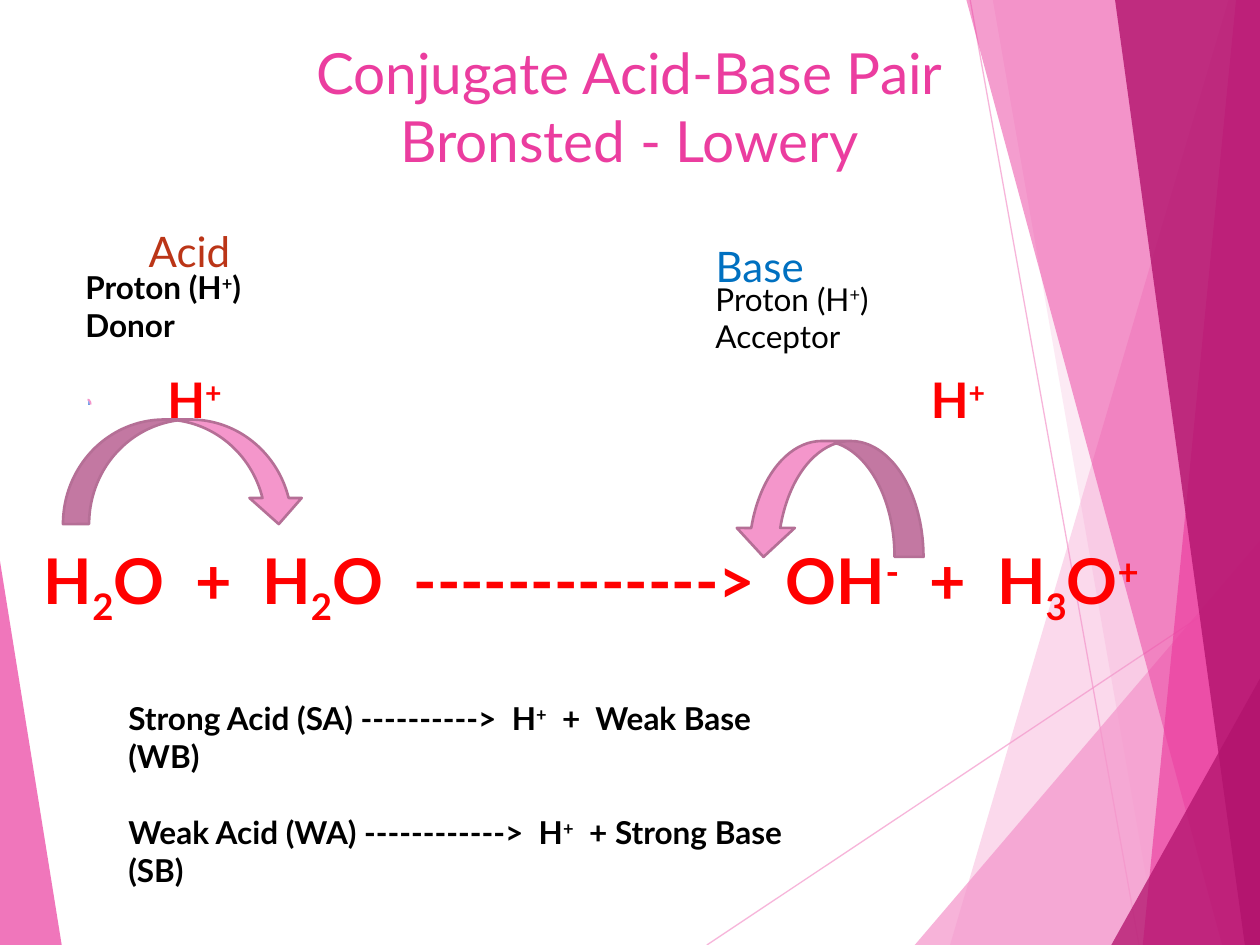
from dataclasses import dataclass
from typing import Optional

from lxml.etree import SubElement
from pptx import Presentation
from pptx.dml.color import RGBColor
from pptx.enum.shapes import MSO_CONNECTOR, MSO_SHAPE
from pptx.enum.text import MSO_ANCHOR as Anchor, MSO_AUTO_SIZE as AutoSize, PP_ALIGN as Align
from pptx.oxml.ns import qn
from pptx.util import Inches, Pt

COLORS = {
    "light": "F496CB", "pink": "EB3D9F", "deep": "B2136D", "edge": "B56F96",
    "acid": "BB3517", "base": "0070C0", "red": "FF0000", "black": "000000",
}
FONT = "Lato"
SHIFT = {"^": "30000", "_": "-25000"}


@dataclass
class Facet:
    points: list
    color: str
    opacity: int


@dataclass
class Ray:
    start: tuple
    end: tuple


@dataclass
class Caption:
    box: tuple
    lines: list
    bold: bool = True
    color: str = "black"
    gap: float = 0


@dataclass
class Transfer:
    box: tuple
    leftward: bool


def rgb(name: str) -> RGBColor:
    return RGBColor.from_string(COLORS[name])


def set_opacity(fill, percent: int) -> None:
    color = fill._xPr.find(qn("a:solidFill"))[0]
    SubElement(color, qn("a:alpha")).set("val", str(percent * 1000))


def draw_ray(shapes, ray: Ray) -> None:
    ends = [Inches(v) for v in ray.start + ray.end]
    line = shapes.add_connector(MSO_CONNECTOR.STRAIGHT, *ends)
    line.line.color.rgb = rgb("light")
    line.line.width = Pt(0.75)
    set_opacity(line.line.fill, 70)
    SubElement(line.element.spPr, qn("a:effectLst"))


def draw_facet(shapes, facet: Facet) -> None:
    points = [(Inches(x), Inches(y)) for x, y in facet.points]
    builder = shapes.build_freeform(*points[0], scale=1.0)
    builder.add_line_segments(points[1:], close=True)
    shape = builder.convert_to_shape()
    shape.shadow.inherit = False
    shape.fill.solid()
    shape.fill.fore_color.rgb = rgb(facet.color)
    set_opacity(shape.fill, facet.opacity)
    shape.line.fill.background()


def add_run(paragraph, text: str, color: str, size: float, bold: bool = False,
            shift: Optional[str] = None) -> None:
    run = paragraph.add_run()
    run.text = text
    for key, value in {"name": FONT, "size": Pt(size), "bold": bold}.items():
        setattr(run.font, key, value)
    run.font.color.rgb = rgb(color)
    if shift:
        run.font._element.set("baseline", SHIFT[shift])


def add_formula(paragraph, text: str, color: str, size: float, bold: bool) -> None:
    """The character after ^ is raised, and the one after _ is lowered."""
    plain, marks = "", iter(text)
    for mark in marks:
        if mark not in SHIFT:
            plain += mark
            continue
        add_run(paragraph, plain, color, size, bold)
        add_run(paragraph, next(marks), color, size, bold, mark)
        plain = ""
    if plain:
        add_run(paragraph, plain, color, size, bold)


def draw_caption(shapes, caption: Caption):
    frame = shapes.add_textbox(*map(Inches, caption.box)).text_frame
    frame.word_wrap = True
    for index, (text, size) in enumerate(caption.lines):
        paragraph = frame.add_paragraph() if index else frame.paragraphs[0]
        if index:
            paragraph.space_before = Pt(caption.gap)
        add_formula(paragraph, text, caption.color, size, caption.bold)
    return frame


def draw_transfer(shapes, transfer: Transfer) -> None:
    arrow = shapes.add_shape(MSO_SHAPE.CURVED_DOWN_ARROW, *map(Inches, transfer.box))
    arrow.shadow.inherit = False
    arrow.fill.solid()
    arrow.fill.fore_color.rgb = rgb("light")
    arrow.line.color.rgb = rgb("edge")
    arrow.line.width = Pt(1.5)
    if transfer.leftward:
        arrow.element.spPr.xfrm.set("flipH", "1")


def fill_placeholder(holder, box: tuple, text: str, color: str, size: float,
                     anchor, align) -> None:
    for key, value in zip(("left", "top", "width", "height"), box):
        setattr(holder, key, Inches(value))
    frame = holder.text_frame
    formats = {"word_wrap": True, "auto_size": AutoSize.NONE, "vertical_anchor": anchor}
    for key, value in formats.items():
        setattr(frame, key, value)
    paragraph = frame.paragraphs[0]
    paragraph.alignment = align
    paragraph.space_before = Pt(0)
    for index, line in enumerate(text.split("\n")):
        if index:
            paragraph.add_line_break()
        add_run(paragraph, line, color, size)
    # Bring the text in front of the backdrop
    holder.element.getparent().append(holder.element)


RAYS = [Ray((5.61, 7.5), (10.01, 4.57)), Ray((7.7, 0), (9.04, 7.5))]
FACETS = [
    Facet([(9.75, 0), (7.54, 7.5), (10.02, 7.5), (10.01, 0)], "light", 36),
    Facet([(7.88, 0), (9.19, 7.5), (10.01, 7.5), (10.01, 0)], "light", 20),
    Facet([(7.26, 7.5), (10, 4.29), (10.01, 7.5)], "light", 72),
    Facet([(7.67, 0), (9.7, 7.5), (10.01, 7.5), (10.01, 0)], "pink", 50),
    Facet([(9.81, 0), (9.07, 7.5), (10.01, 7.5), (10, 0)], "pink", 66),
    Facet([(8.85, 0), (9.88, 7.5), (10.02, 7.5), (10, 0)], "deep", 80),
    Facet([(8.82, 7.5), (10.02, 5.35), (10.02, 7.5)], "deep", 76),
    Facet([(-0.01, 4.39), (0.49, 7.5), (-0.01, 7.5)], "pink", 70),
]
REACTION = Caption((0.25, 2.88, 9.17, 2.39), [
    ("\tH^+\tH^+", 28),
    ("H_2O  +  H_2O  ------------->  OH^-  +  H_3O^+", 36),
], color="red", gap=65)
PROTON_TABS = (0.98, 7.04)
CAPTIONS = [
    Caption((5.58, 2.17, 2.36, 0.71), [("Proton (H^+) Acceptor", 18)], bold=False),
    Caption((0.92, 5.5, 5.65, 1.01), [
        ("Strong Acid (SA) ---------->  H^+  +  Weak Base (WB)", 18),
        ("Weak Acid (WA) ------------>  H^+  + Strong Base (SB)", 18),
    ], gap=22),
    Caption((0.58, 2.08, 2.17, 0.71), [("Proton (H^+) Donor", 18)]),
]
TRANSFERS = [
    Transfer((0.5, 3.33, 1.92, 0.83), False),
    Transfer((5.83, 3.5, 1.5, 0.92), True),
]


def main() -> None:
    deck = Presentation()
    deck.slide_width, deck.slide_height = Inches(10), Inches(7.5)
    slide = deck.slides.add_slide(deck.slide_layouts[4])
    shapes = slide.shapes
    title, acid, acid_list, base, base_list = slide.placeholders
    for unused in (acid_list, base_list):
        unused.element.getparent().remove(unused.element)

    # Backdrop
    for ray in RAYS:
        draw_ray(shapes, ray)
    for facet in FACETS:
        draw_facet(shapes, facet)

    # Title and headings
    fill_placeholder(title, (1.33, 0.25, 7.33, 1.25),
                     "Conjugate Acid-Base Pair\nBronsted - Lowery",
                     "pink", 32.4, Anchor.TOP, Align.CENTER)
    fill_placeholder(acid, (1.08, 1.5, 2.5, 0.74), "Acid", "acid", 24, Anchor.BOTTOM, Align.LEFT)
    fill_placeholder(base, (5.58, 1.58, 1.5, 0.78), "Base", "base", 24, Anchor.BOTTOM, Align.LEFT)

    # Reaction, with the moving protons set on tab stops
    protons = draw_caption(shapes, REACTION).paragraphs[0]
    stops = SubElement(protons._p.get_or_add_pPr(), qn("a:tabLst"))
    for position in PROTON_TABS:
        stop = SubElement(stops, qn("a:tab"))
        stop.set("pos", str(Inches(position)))
        stop.set("algn", "l")

    # Captions and proton transfers
    for caption in CAPTIONS:
        draw_caption(shapes, caption)
    arc = shapes.add_shape(MSO_SHAPE.ARC, *map(Inches, (0.67, 3.17, 0.05, 0.08)))
    arc.shadow.inherit = False
    arc.line.color.rgb = rgb("light")
    arc.line.width = Pt(1)
    for transfer in TRANSFERS:
        draw_transfer(shapes, transfer)

    deck.save("out.pptx")


if __name__ == "__main__":
    main()
